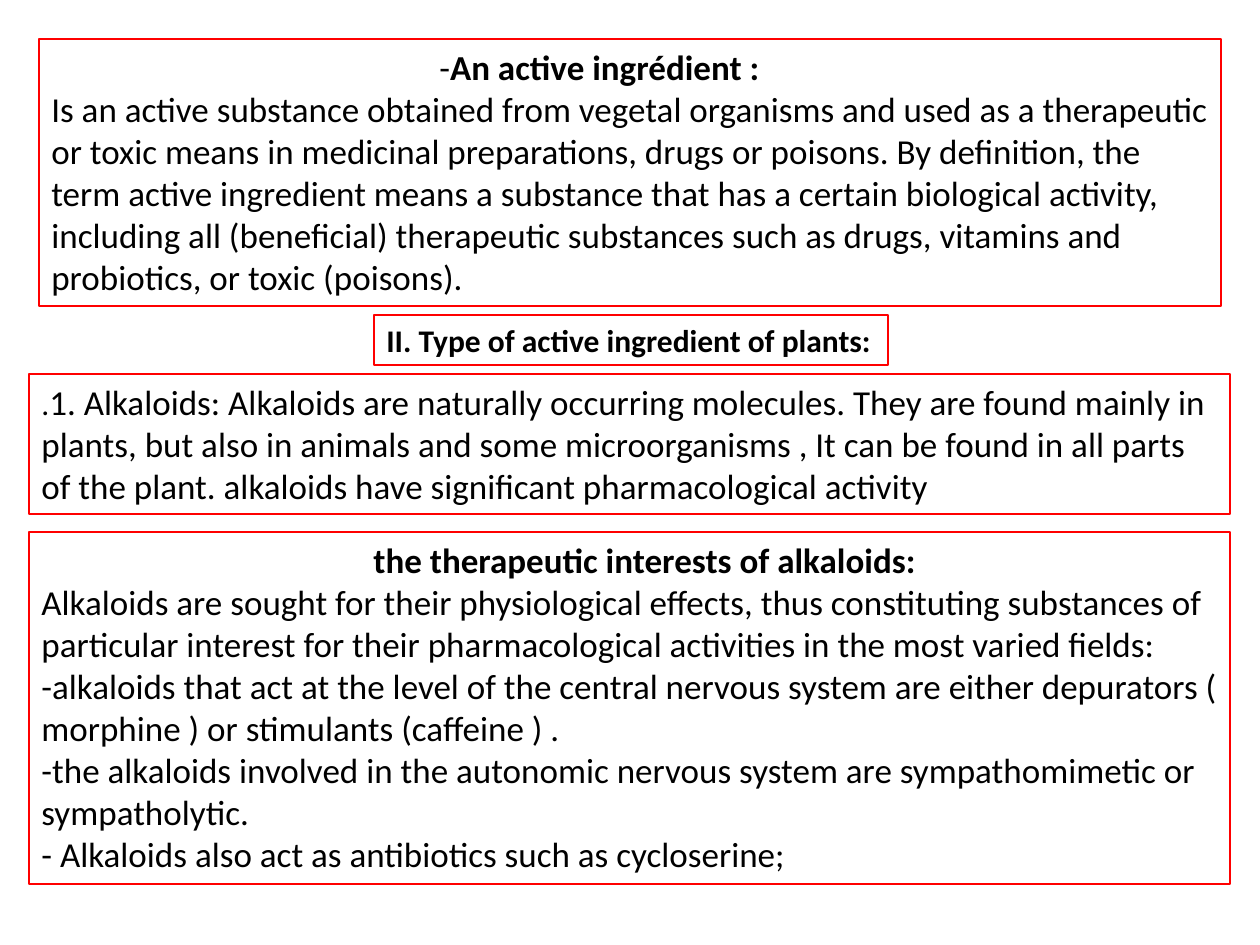
from dataclasses import dataclass

from pptx import Presentation
from pptx import util as u
from pptx.dml.color import RGBColor
from pptx.enum import shapes, text

PX = 914400 / 126  # EMU per px


@dataclass(frozen=True)
class Theme:
    font: str = "Calibri"
    ink: RGBColor = RGBColor(0, 0, 0)
    border: RGBColor = RGBColor(255, 0, 0)
    border_pt: float = 0.75
    body: int = 20
    small: int = 18


@dataclass(frozen=True)
class Run:
    text: str
    bold: bool = False
    size: int = Theme.body


@dataclass(frozen=True)
class Para:
    runs: tuple[Run, ...]
    indent: int = 0


@dataclass(frozen=True)
class Box:
    left: int
    top: int
    width: int
    height: int
    paras: tuple[Para, ...]
    wrap: bool = True


THEME = Theme()


def px(n: int) -> u.Emu:
    return u.Emu(round(n * PX))


def plain(line: str) -> Para:
    return Para((Run(line),))


def add_text(p, content: str, *, bold: bool, size: int) -> None:
    r = p.add_run()
    r.text = content
    r.font.name = THEME.font
    r.font.size = u.Pt(size)
    r.font.bold = bold
    r.font.color.rgb = THEME.ink


def draw_box(slide, box: Box) -> None:
    sp = slide.shapes.add_shape(
        shapes.MSO_SHAPE.RECTANGLE,
        px(box.left), px(box.top), px(box.width), px(box.height))
    sp.shadow.inherit = False
    sp.fill.background()
    sp.line.color.rgb = THEME.border
    sp.line.width = u.Pt(THEME.border_pt)
    tf = sp.text_frame
    tf.word_wrap = box.wrap
    tf.auto_size = text.MSO_AUTO_SIZE.SHAPE_TO_FIT_TEXT
    tf.vertical_anchor = text.MSO_ANCHOR.TOP
    for i, para in enumerate(box.paras):
        p = tf.add_paragraph() if i else tf.paragraphs[0]
        p.alignment = text.PP_ALIGN.LEFT
        if para.indent:
            p._p.get_or_add_pPr().set("marL", str(px(para.indent)))
        for run in para.runs:
            add_text(p, run.text, bold=run.bold, size=run.size)


BOXES = (
    # Definition
    Box(39, 39, 1182, 267, (
        Para((Run("-"), Run("An active ingrédient :", bold=True)), indent=388),
        plain("Is an active substance obtained from vegetal organisms and used as a "
              "therapeutic or toxic means in medicinal preparations, drugs or poisons. "
              "By definition, the term active ingredient means a substance that has a "
              "certain biological activity, including all (beneficial) therapeutic "
              "substances such as drugs, vitamins and probiotics, or toxic (poisons)."),
    )),
    # Section title
    Box(374, 315, 514, 50, (
        Para((Run("II. Type of active ingredient of plants:", bold=True,
                  size=THEME.small),)),
    ), wrap=False),
    # Alkaloids
    Box(29, 374, 1201, 140, (
        Para((Run(".", size=THEME.small),
              Run("1. Alkaloids: Alkaloids are naturally occurring molecules. They are "
                  "found mainly in plants, but also in animals and some microorganisms "
                  ", It can be found in all parts of the plant. alkaloids have "
                  "significant pharmacological activity"))),
    )),
    # Therapeutic interests
    Box(29, 532, 1201, 352, (
        Para((Run("the therapeutic interests of alkaloids:", bold=True),), indent=332),
        plain("Alkaloids are sought for their physiological effects, thus constituting "
              "substances of particular interest for their pharmacological activities "
              "in the most varied fields:"),
        plain("-alkaloids that act at the level of the central nervous system are "
              "either depurators ( morphine ) or stimulants (caffeine ) ."),
        plain("-the alkaloids involved in the autonomic nervous system are "
              "sympathomimetic or sympatholytic."),
        plain("- Alkaloids also act as antibiotics such as cycloserine;"),
    )),
)


def main() -> None:
    prs = Presentation()
    prs.slide_width, prs.slide_height = px(1260), px(945)
    slide = prs.slides.add_slide(prs.slide_layouts[6])
    for box in BOXES:
        draw_box(slide, box)
    prs.save("out.pptx")


if __name__ == "__main__":
    main()
